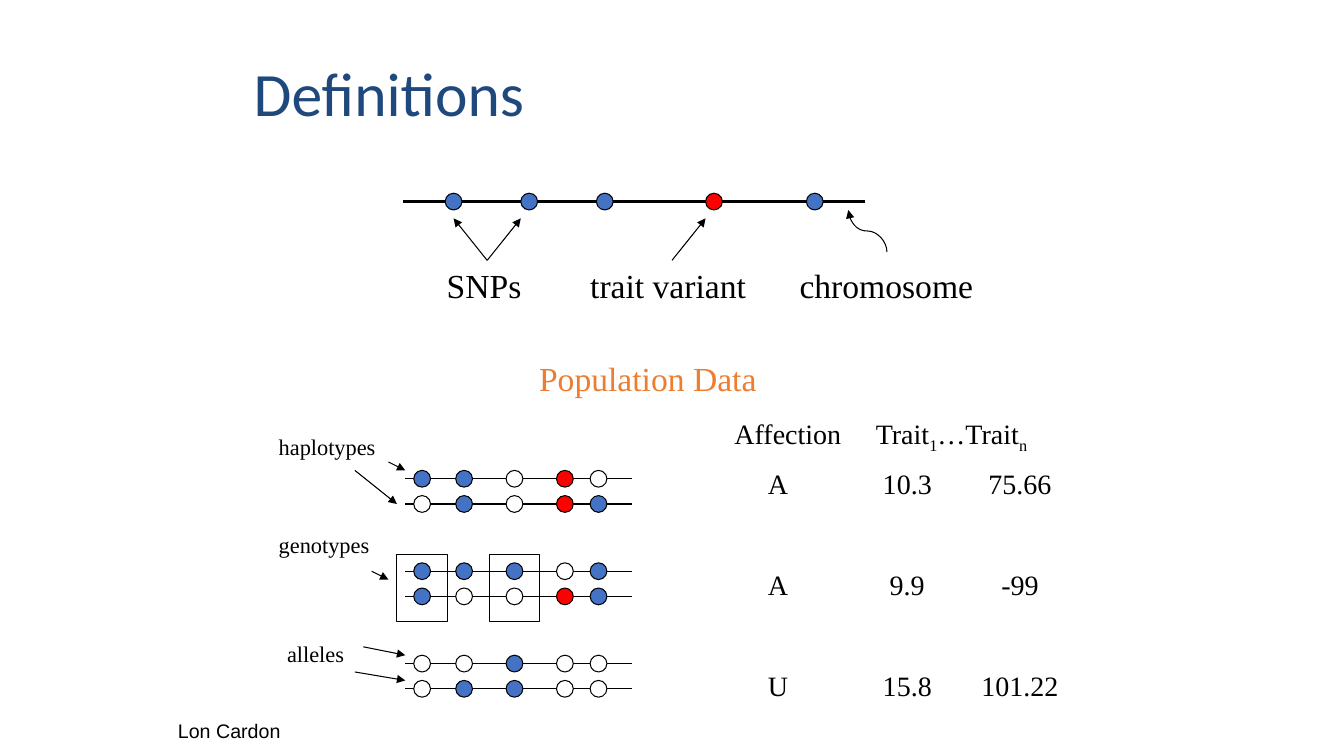
import pptx
import pptx.util
import pptx.dml.color
import pptx.enum.shapes
import pptx.enum.text
import pptx.oxml.ns
import lxml.etree

Pt = pptx.util.Pt
SERIF = "Times New Roman"
BLACK, ORANGE, NAVY = "000000", "ED7D31", "1F497D"
# B: blue variant, R: trait variant, W: other allele
DOT_COLORS = {"B": "4472C4", "R": "FF0000", "W": "FFFFFF"}
DOT = 12

# Content: dot centres along the strands and the kind of each dot
TOP_DOTS = [324, 378, 432, 510, 582]
SAMPLE_DOTS = [301.5, 331.5, 367.5, 403.5, 427.5]
SAMPLES = [("BBWRW", "WBWRB"), ("BBBWB", "BWWRB"), ("WWBWW", "WBBWW")]
SAMPLE_TOP, SAMPLE_PITCH, STRAND_GAP = 342, 66, 18

# Labels: text, left, top, width, height, size, font, colour
LABELS = [
    ("chromosome", 564, 186, 142, 36, 24, SERIF, BLACK),
    ("SNPs", 312, 186, 72, 36, 24, SERIF, BLACK),
    ("trait variant", 414.5, 186, 129, 36, 24, SERIF, BLACK),
    ("Population Data", 378, 252, 174, 36, 24, SERIF, ORANGE),
    ("haplotypes", 192, 306, 87, 26.5, 16, SERIF, BLACK),
    ("genotypes", 192, 376, 82, 26.5, 16, SERIF, BLACK),
    ("alleles", 198, 454, 58, 26.5, 16, SERIF, BLACK),
    ("Lon Cardon", 120, 510, 198, 24, 14, "Arial", BLACK),
]

# Arrows: from x, y to x, y
ARROWS = [
    (348, 186, 324, 156), (348, 186, 372, 156), (480, 186, 504, 156),
    (277.5, 330, 289.5, 336), (253.5, 336, 283.5, 360),
    (265.5, 408, 277.5, 414),
    (253.5, 480, 289.5, 486), (259.5, 462, 289.5, 468),
]

GENOTYPE_BOXES = [283.5, 349.5]

TRAIT_HEADER = [("Affection\tTrait", False), ("1", True), ("…Trait", False), ("n", True)]
TRAIT_ROWS = [("A", "10.3", "75.66"), ("A", "9.9", "-99"), ("U", "15.8", "101.22")]

presentation = pptx.Presentation()
presentation.slide_width, presentation.slide_height = Pt(960), Pt(540)
slide = presentation.slides.add_slide(presentation.slide_layouts[5])


def color(value):
    return pptx.dml.color.RGBColor.from_string(value)


def format_runs(paragraph, size, font, value):
    for run in paragraph.runs:
        run.font.size, run.font.name = Pt(size), font
        run.font.color.rgb = color(value)


def add_text(text, left, top, width, height, size, font, value, wrap=False):
    box = slide.shapes.add_textbox(Pt(left), Pt(top), Pt(width), Pt(height))
    box.text_frame.word_wrap = wrap
    box.text_frame.auto_size = pptx.enum.text.MSO_AUTO_SIZE.SHAPE_TO_FIT_TEXT
    box.text_frame.text = text
    for paragraph in box.text_frame.paragraphs:
        paragraph.alignment = pptx.enum.text.PP_ALIGN.LEFT
        format_runs(paragraph, size, font, value)
    return box.text_frame


def add_tabs(paragraph, stops):
    properties = paragraph._p.get_or_add_pPr()
    tabs = lxml.etree.SubElement(properties, pptx.oxml.ns.qn("a:tabLst"))
    for position, align in stops:
        lxml.etree.SubElement(tabs, pptx.oxml.ns.qn("a:tab"),
                              pos=str(int(Pt(position))), algn=align)


def add_line(x1, y1, x2, y2, width=0.75, arrow=False, curved=False):
    kinds = pptx.enum.shapes.MSO_CONNECTOR
    line = slide.shapes.add_connector(kinds.CURVE if curved else kinds.STRAIGHT,
                                      Pt(x1), Pt(y1), Pt(x2), Pt(y2))
    line.line.color.rgb = color(BLACK)
    line.line.width = Pt(width)
    if arrow:
        lxml.etree.SubElement(line.line._get_or_add_ln(),
                              pptx.oxml.ns.qn("a:tailEnd"), type="triangle")
    lxml.etree.SubElement(line._element.spPr, pptx.oxml.ns.qn("a:effectLst"))
    return line


def add_outlined(kind, left, top, width, height, fill=None):
    shape = slide.shapes.add_shape(kind, Pt(left), Pt(top), Pt(width), Pt(height))
    shape.shadow.inherit = False
    if fill:
        shape.fill.solid()
        shape.fill.fore_color.rgb = color(fill)
    else:
        shape.fill.background()
    shape.line.color.rgb = color(BLACK)
    shape.line.width = Pt(0.75)


def add_strand(left, right, y, width, centres, kinds):
    add_line(left, y, right, y, width)
    for x, kind in zip(centres, kinds):
        add_outlined(pptx.enum.shapes.MSO_SHAPE.OVAL, x - DOT / 2, y - DOT / 2,
                     DOT, DOT, DOT_COLORS[kind])


# Title
title = slide.shapes.title
title.left, title.top, title.width, title.height = Pt(174), Pt(24), Pt(612), Pt(90)
title.text_frame.text = "Definitions"
title.text_frame.vertical_anchor = pptx.enum.text.MSO_ANCHOR.MIDDLE
heading = title.text_frame.paragraphs[0]
heading.alignment = pptx.enum.text.PP_ALIGN.LEFT
heading.line_spacing = 0.9
format_runs(heading, 44, "Calibri", NAVY)

# Chromosome strands
add_strand(288, 618, 144, 2.25, TOP_DOTS, "BBBRB")
for index, strands in enumerate(SAMPLES):
    for offset, kinds in enumerate(strands):
        y = SAMPLE_TOP + index * SAMPLE_PITCH + offset * STRAND_GAP
        add_strand(289.5, 451.5, y, 0.75, SAMPLE_DOTS, kinds)

# Genotype boxes
for left in GENOTYPE_BOXES:
    add_outlined(pptx.enum.shapes.MSO_SHAPE.RECTANGLE, left, 396, 36, 48)

# Labels and arrows
for label in LABELS:
    add_text(*label, wrap=True)
for arrow in ARROWS:
    add_line(*arrow, arrow=True)

# Curved arrow to the chromosome, turned a quarter
curve = add_line(634.8, 151.2, 604.8, 178.8, arrow=True, curved=True)
curve._element.spPr.xfrm.set("rot", "5400000")

# Trait header with subscripts
header = add_text("", 517.5, 294, 227, 31, 20, SERIF, BLACK, wrap=True).paragraphs[0]
for text, subscript in TRAIT_HEADER:
    run = header.add_run()
    run.text = text
    if subscript:
        run.font._element.set("baseline", "-25000")
format_runs(header, 20, SERIF, BLACK)
add_tabs(header, [(101, "l")])

# Trait values, aligned by tab stops
rows = add_text("\n".join("\t".join(row) for row in TRAIT_ROWS),
                541.5, 330, 227, 175, 20, SERIF, BLACK, wrap=True)
for index, paragraph in enumerate(rows.paragraphs):
    paragraph.space_before = Pt(48 if index else 0)
    add_tabs(paragraph, [(99.5, "ctr"), (180, "ctr")])

presentation.save("out.pptx")
